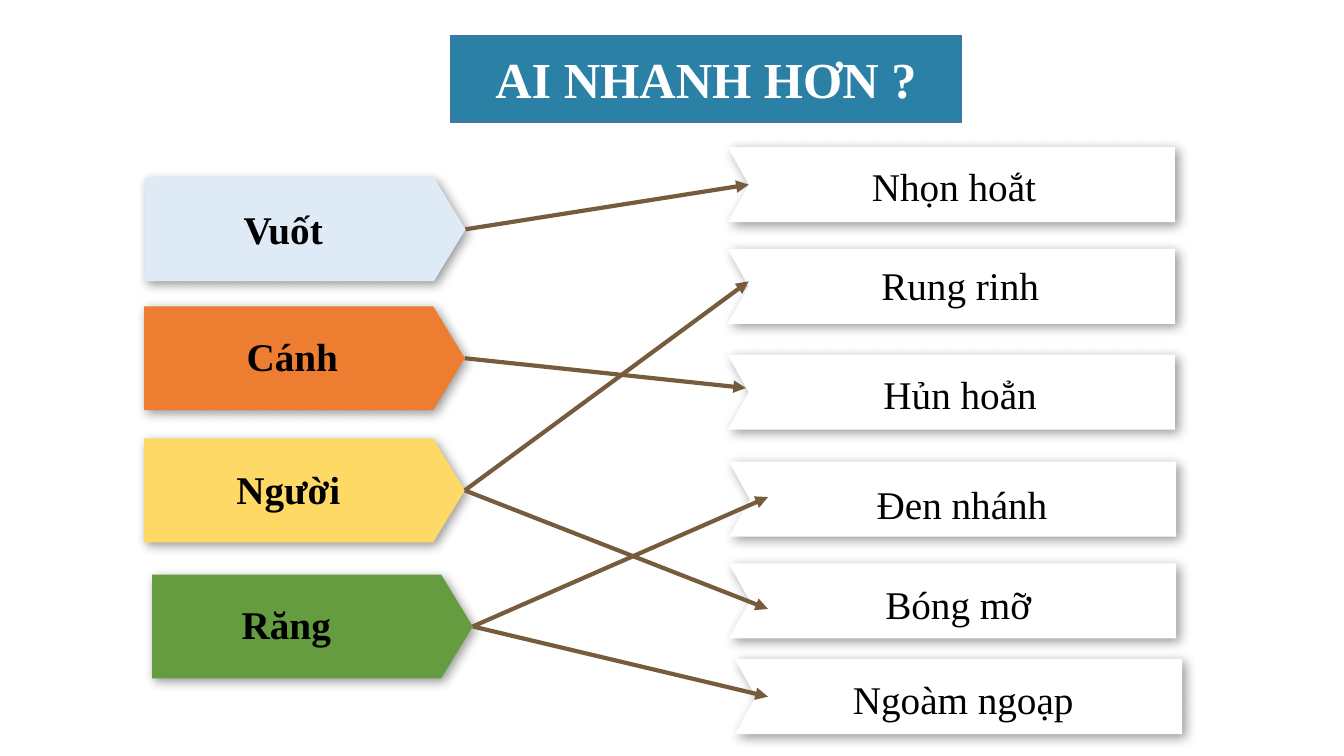
from dataclasses import dataclass

from lxml.etree import SubElement
from pptx import Presentation
from pptx.dml.color import RGBColor
from pptx.enum.shapes import MSO_CONNECTOR as Connector, MSO_SHAPE as Shape
from pptx.enum.text import MSO_ANCHOR as Anchor, PP_ALIGN as Align
from pptx.oxml.ns import qn
from pptx.util import Pt


@dataclass(frozen=True)
class Theme:
    font: str = "Times New Roman"
    title_size: float = 36
    label_size: float = 28
    banner: str = "2B80A5"
    banner_edge: str = "43739E"
    white: str = "FFFFFF"
    black: str = "000000"
    arrow: str = "765C3C"


@dataclass(frozen=True)
class Box:
    """A region in points."""
    left: float
    top: float
    width: float
    height: float

    def inner(self, dx, dy, width, height):
        return Box(self.left + dx, self.top + dy, width, height)

    def lengths(self):
        return Pt(self.left), Pt(self.top), Pt(self.width), Pt(self.height)


THEME = Theme()
PLATE_SIZE = (229, 74.2)
RIBBON_SIZE = (319.5, 53.5)
NOTCH = 15

# word: left, top, colour, label box inside the plate, line spacing
PLATES = {
    "Vuốt": (103.5, 126.7, "DEEBF7", (-0.5, 9.4, 198.7, 44.6), 1.2),
    "Cánh": (103, 218.8, "ED7D31", (10, 15.2, 191.5, 41), 1),
    "Người": (103, 313.2, "FFD966", (7.2, 15.8, 191.5, 41), 1),
    "Răng": (108.7, 410.4, "659C40", (0, 15.1, 191.5, 41), 1),
}
# word: left, top, label offset inside the ribbon
RIBBONS = {
    "Nhọn hoắt": (519.8, 105.1, (8.6, 2.9)),
    "Rung rinh": (519.8, 177.8, (13, 0.7)),
    "Hủn hoẳn": (519.8, 253.4, (13, 2.9)),
    "Đen nhánh": (520.6, 329.8, (13.5, 5)),
    "Bóng mỡ": (520.6, 402.5, (10.8, 3.6)),
    "Ngoàm ngoạp": (524.9, 470.9, (10.1, 2.9)),
}
# plate, ribbon, offset of the arrowhead from the notch tip
MATCHES = [
    ("Vuốt", "Nhọn hoắt", (0, 0)),
    ("Cánh", "Hủn hoẳn", (-2, -3)),
    ("Người", "Rung rinh", (0, -3.6)),
    ("Người", "Bóng mỡ", (13, 5.7)),
    ("Răng", "Đen nhánh", (13, -1.5)),
    ("Răng", "Ngoàm ngoạp", (8.7, 0)),
]


def rgb(code):
    return RGBColor.from_string(code)


def write(frame, text, size, color, bold, spacing=1.0):
    frame.word_wrap = True
    para = frame.paragraphs[0]
    para.text = text
    para.alignment = Align.CENTER
    para.line_spacing = spacing
    font = para.font
    font.name, font.size, font.bold = THEME.font, Pt(size), bold
    font.color.rgb = rgb(color)


def add_label(page, box, text, bold, spacing):
    label = page.shapes.add_textbox(*box.lengths())
    write(label.text_frame, text, THEME.label_size, THEME.black, bold, spacing)


def paint_with_shadow(shape, color):
    shape.fill.solid()
    shape.fill.fore_color.rgb = rgb(color)
    shape.line.fill.background()
    shape.shadow.inherit = False
    effects = shape._element.spPr.find(qn("a:effectLst"))
    shadow = SubElement(effects, qn("a:outerShdw"), blurRad=str(Pt(8)),
                        dist=str(Pt(3)), dir=str(45 * 60000),
                        algn="tl", rotWithShape="0")
    tint = SubElement(shadow, qn("a:srgbClr"), val=THEME.black)
    SubElement(tint, qn("a:alpha"), val="40000")


def add_title(page, box, text):
    title = page.shapes.title
    title.left, title.top, title.width, title.height = box.lengths()
    title.fill.solid()
    title.fill.fore_color.rgb = rgb(THEME.banner)
    title.line.color.rgb = rgb(THEME.banner_edge)
    title.line.width = Pt(1)
    title.text_frame.vertical_anchor = Anchor.MIDDLE
    write(title.text_frame, text, THEME.title_size, THEME.white, True)


def add_plate(page, box, text, color, label, spacing):
    plate = page.shapes.add_shape(Shape.PENTAGON, *box.lengths())
    plate.adjustments[0] = 0.305
    paint_with_shadow(plate, color)
    add_label(page, box.inner(*label), text, True, spacing)
    return plate


def add_ribbon(page, box, text, offset):
    """Draw a notched ribbon and return the tip of its notch."""
    right, bottom = box.left + box.width, box.top + box.height
    tip = (box.left + NOTCH, box.top + box.height / 2)
    corners = [(right, box.top), (right, bottom), (box.left, bottom), tip]
    outline = page.shapes.build_freeform(Pt(box.left), Pt(box.top))
    outline.add_line_segments([(Pt(x), Pt(y)) for x, y in corners])
    paint_with_shadow(outline.convert_to_shape(), THEME.white)
    add_label(page, box.inner(*offset, 306, 43), text, False, 1.14)
    return tip


def add_arrow(page, plate, tip, offset):
    x, y = tip[0] + offset[0], tip[1] + offset[1]
    arrow = page.shapes.add_connector(Connector.STRAIGHT, 0, 0, Pt(x), Pt(y))
    arrow.begin_connect(plate, 3)
    arrow.line.color.rgb = rgb(THEME.arrow)
    arrow.line.width = Pt(3)
    SubElement(arrow.line._get_or_add_ln(), qn("a:tailEnd"), type="triangle")
    SubElement(arrow._element.spPr, qn("a:effectLst"))


def add_matching_game(page):
    # Words on the left
    plates = {
        word: add_plate(page, Box(left, top, *PLATE_SIZE), word, color, label, spacing)
        for word, (left, top, color, label, spacing) in PLATES.items()
    }
    # Descriptions on the right
    tips = {
        word: add_ribbon(page, Box(left, top, *RIBBON_SIZE), word, offset)
        for word, (left, top, offset) in RIBBONS.items()
    }
    # Matching arrows
    for word, description, offset in MATCHES:
        add_arrow(page, plates[word], tips[description], offset)


def main():
    deck = Presentation()
    deck.slide_width, deck.slide_height = Pt(960), Pt(540)
    page = deck.slides.add_slide(deck.slide_layouts[5])
    add_title(page, Box(321.8, 25.2, 365, 62), "AI NHANH HƠN ?")
    add_matching_game(page)
    deck.save("out.pptx")


if __name__ == "__main__":
    main()
